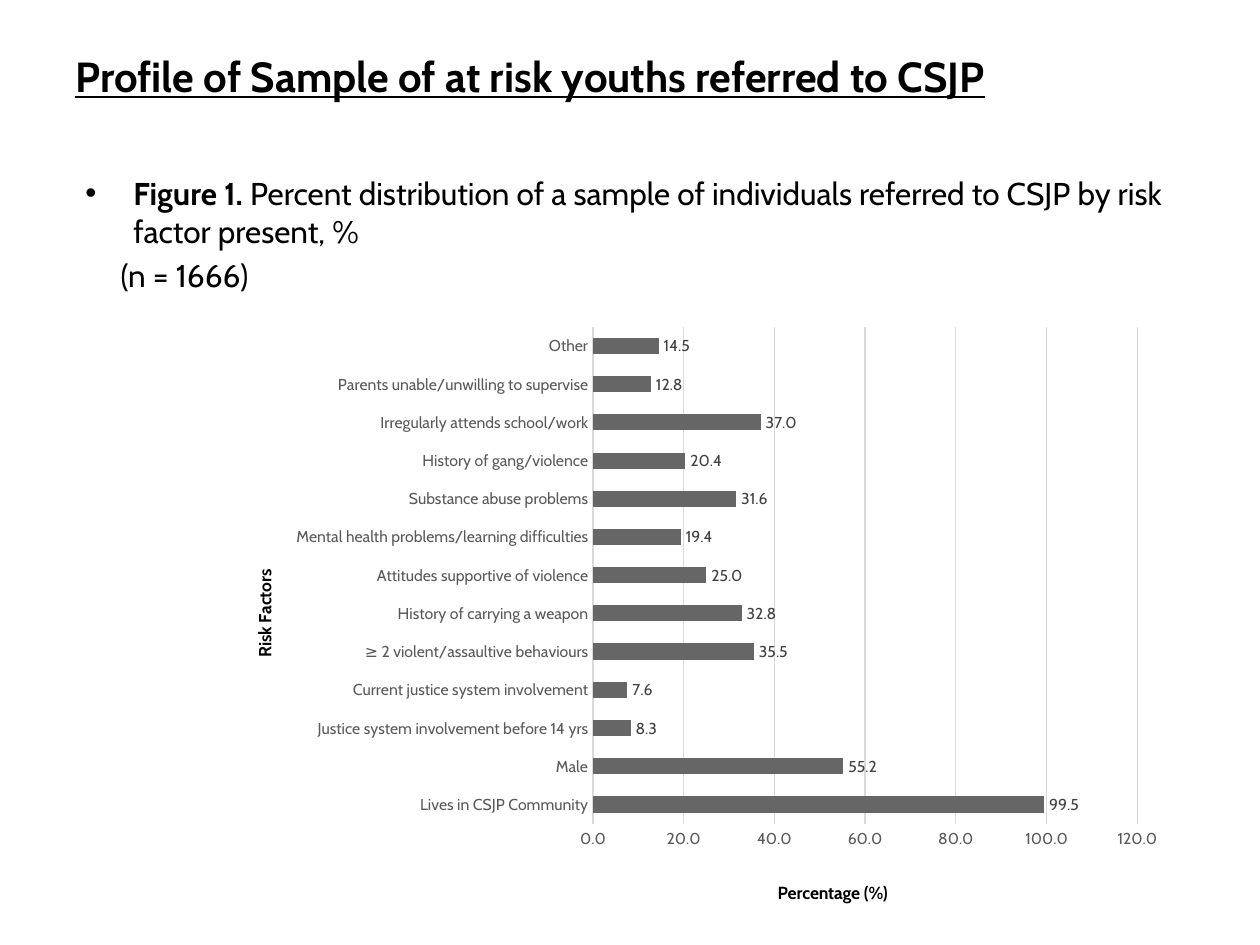
from lxml import etree
from pptx import Presentation
from pptx.chart.data import CategoryChartData
from pptx.dml.color import RGBColor
from pptx.enum import chart as ch, text
from pptx.oxml import ns
from pptx.util import Inches, Pt

FONT = "Cabin"
BLACK, GREY, GRID, BAR, LABEL = "000000", "595959", "D9D9D9", "666666", "404040"
RISK_FACTORS = [
    ("Lives in CSJP Community", 99.5),
    ("Male", 55.2),
    ("Justice system involvement before 14 yrs", 8.3),
    ("Current justice system involvement", 7.6),
    ("≥ 2 violent/assaultive behaviours", 35.5),
    ("History of carrying a weapon", 32.8),
    ("Attitudes supportive of violence", 25),
    ("Mental health problems/learning difficulties", 19.4),
    ("Substance abuse problems", 31.6),
    ("History of gang/violence", 20.4),
    ("Irregularly attends school/work", 37),
    ("Parents unable/unwilling to supervise", 12.8),
    ("Other", 14.5),
]


def rgb(value):
    return RGBColor.from_string(value)


def set_font(font, size, color=BLACK, **values):
    font.color.rgb = rgb(color)
    for name, value in {"name": FONT, "size": Pt(size), **values}.items():
        setattr(font, name, value)


def add_run(p, words, size, **values):
    r = p.add_run()
    r.text = words
    set_font(r.font, size, **values)


def add_text_frame(s, box):
    tf = s.shapes.add_textbox(*map(Inches, box)).text_frame
    tf.word_wrap = True
    return tf


def indent(p, left, first=0):
    pPr = p._p.get_or_add_pPr()
    pPr.set("marL", str(Inches(left)))
    pPr.set("indent", str(Inches(first)))
    return pPr


def add_title(s, box):
    tf = add_text_frame(s, box)
    tf.vertical_anchor = text.MSO_ANCHOR.BOTTOM
    tf.margin_bottom = Inches(0.45)
    add_run(tf.paragraphs[0], "Profile of Sample of at risk youths referred to CSJP",
            24, bold=True, underline=True)


def add_caption(s, box):
    tf = add_text_frame(s, box)
    p = tf.paragraphs[0]
    pPr = indent(p, 0.38, -0.38)
    etree.SubElement(pPr, ns.qn("a:buFont")).set("typeface", "Arial")
    etree.SubElement(pPr, ns.qn("a:buChar")).set("char", "•")
    add_run(p, "Figure 1.", 18, bold=True)
    add_run(p, " Percent distribution of a sample of individuals referred to CSJP "
               "by risk factor present, %", 18)
    p = tf.add_paragraph()
    indent(p, 0.28)
    p.space_before = Pt(3.6)
    add_run(p, "(n = 1666)", 18)


def set_layout(parent, index, inner=False, **fractions):
    """Fix the place of a chart part, in fractions of the chart."""
    for old in parent.findall(ns.qn("c:layout")):
        parent.remove(old)
    layout = etree.Element(ns.qn("c:layout"))
    manual = etree.SubElement(layout, ns.qn("c:manualLayout"))
    values = {"xMode": "edge", "yMode": "edge", **fractions}
    if inner:
        values = {"layoutTarget": "inner", **values}
    for name, value in values.items():
        etree.SubElement(manual, ns.qn(f"c:{name}")).set("val", str(value))
    parent.insert(index, layout)


def format_axis(axis, title, x, y):
    axis.major_tick_mark = axis.minor_tick_mark = ch.XL_TICK_MARK.NONE
    set_font(axis.tick_labels.font, 9, GREY)
    p = axis.axis_title.text_frame.paragraphs[0]
    add_run(p, title, 10, bold=True)
    set_layout(axis.axis_title._element, 1, x=x, y=y)


def add_risk_chart(s, box):
    data = CategoryChartData(number_format="0.0")
    names, values = zip(*RISK_FACTORS)
    data.categories = names
    data.add_series("Series 1", values)
    chart = s.shapes.add_chart(ch.XL_CHART_TYPE.BAR_CLUSTERED,
                               *map(Inches, box), data).chart
    chart.has_legend = chart.has_title = False
    set_font(chart.font, 10)

    plot = chart.plots[0]
    plot.gap_width = 136
    plot.vary_by_categories = False
    fill = plot.series[0].format.fill
    fill.solid()
    fill.fore_color.rgb = rgb(BAR)
    plot.has_data_labels = True
    labels = plot.data_labels
    for name, value in {"show_value": True, "number_format": "0.0",
                        "number_format_is_linked": False,
                        "position": ch.XL_LABEL_POSITION.OUTSIDE_END}.items():
        setattr(labels, name, value)
    set_font(labels.font, 9, LABEL)

    cat, val = chart.category_axis, chart.value_axis
    format_axis(cat, "Risk Factors", 0.03, 0.42)
    format_axis(val, "Percentage (%)", 0.58, 0.94)
    val.minimum_scale, val.maximum_scale, val.major_unit = 0, 120, 20
    val.tick_labels.number_format = "0.0"
    val.tick_labels.number_format_is_linked = False
    val.format.line.fill.background()
    for line in (cat.format.line, val.major_gridlines.format.line):
        line.color.rgb = rgb(GRID)
        line.width = Pt(0.75)
    set_layout(chart._chartSpace.chart.plotArea, 0, inner=True,
               x=0.39, y=0.02, w=0.57, h=0.83)


def main():
    prs = Presentation()
    prs.slide_width, prs.slide_height = Inches(10), Inches(7.5)
    s = prs.slides.add_slide(prs.slide_layouts[6])
    add_title(s, (0.5, 0.08, 7.42, 1.17))
    add_caption(s, (0.58, 1.33, 9, 5.84))
    add_risk_chart(s, (1.75, 2.5, 7.58, 4.75))
    prs.save("out.pptx")


if __name__ == "__main__":
    main()
